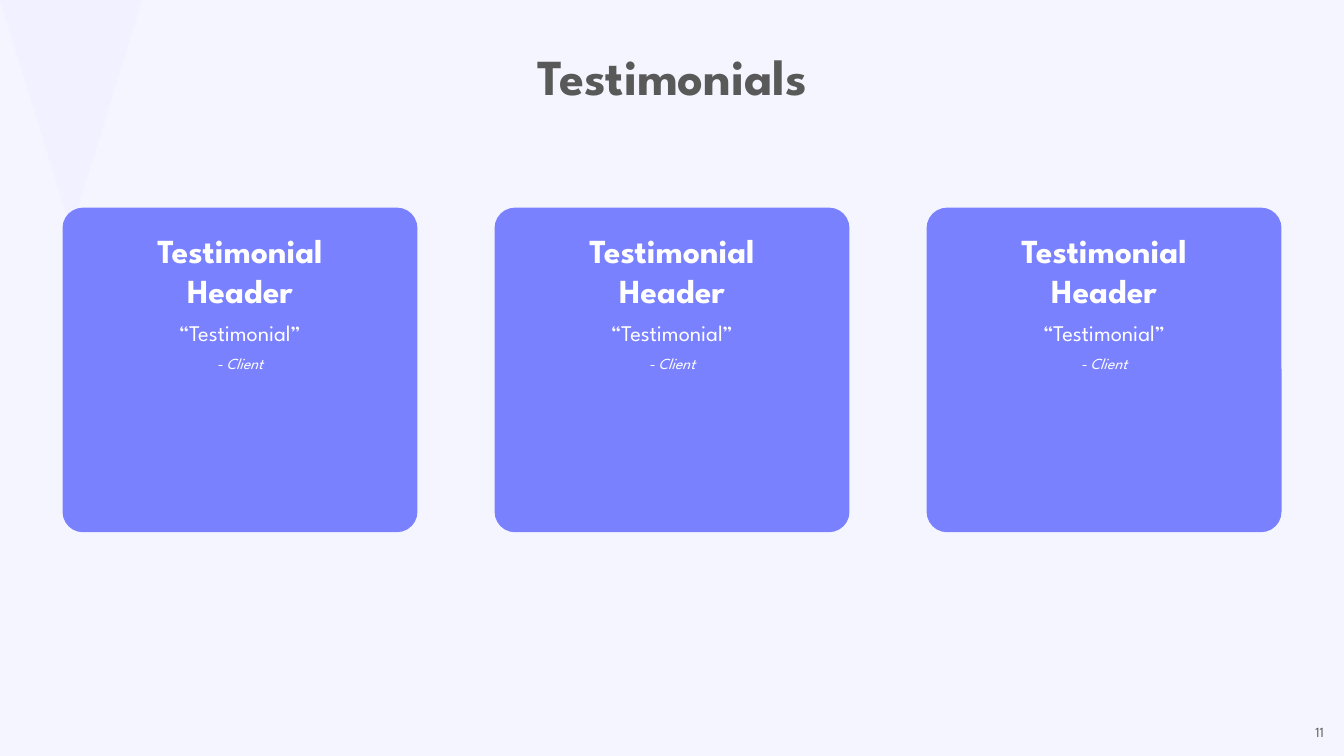
"""Build the testimonials slide with three client cards."""
from dataclasses import dataclass

from pptx import Presentation
from pptx.dml.color import RGBColor
from pptx.enum.shapes import MSO_AUTO_SHAPE_TYPE as ShapeType
from pptx.enum.text import MSO_AUTO_SIZE as AutoSize, PP_ALIGN as Align
from pptx.shapes.autoshape import Shape
from pptx.slide import Slide
from pptx.util import Inches, Pt

FONT = "League Spartan"
BACKGROUND, TRIANGLE, CARD = "F5F5FF", "F1F1FF", "7A81FF"
GREY, WHITE = "595959", "FFFFFF"
SLIDE_WIDTH, SLIDE_HEIGHT = 13.33, 7.5
MARGIN, CARD_TOP, CARD_WIDTH, CARD_HEIGHT = 0.62, 2.06, 3.52, 3.22
TEXT_INSET, TEXT_TOP, TEXT_HEIGHT = 0.345, 2.23, 1.53


@dataclass(frozen=True)
class Area:
    left: float
    top: float
    width: float
    height: float

    def lengths(self) -> tuple[Inches, ...]:
        return tuple(Inches(value) for value in (self.left, self.top, self.width, self.height))


@dataclass(frozen=True)
class Line:
    text: str
    size: float
    color: str
    bold: bool = False
    italic: bool = False
    space_before: float = 0


@dataclass(frozen=True)
class Testimonial:
    header: str
    quote: str
    client: str


TESTIMONIALS = [Testimonial("Testimonial Header", "“Testimonial”", "- Client")] * 3


def rgb(color: str) -> RGBColor:
    return RGBColor.from_string(color)


def add_block(page: Slide, kind: ShapeType, area: Area, color: str) -> Shape:
    block = page.shapes.add_shape(kind, *area.lengths())
    block.shadow.inherit = False
    block.fill.solid()
    block.fill.fore_color.rgb = rgb(color)
    block.line.fill.background()
    return block


def add_text(page: Slide, area: Area, lines: list[Line], align: Align,
             right: float = 0.1, vertical: float = 0.05) -> None:
    frame = page.shapes.add_textbox(*area.lengths()).text_frame
    frame.word_wrap = True
    frame.auto_size = AutoSize.SHAPE_TO_FIT_TEXT
    frame.margin_right = Inches(right)
    frame.margin_top = frame.margin_bottom = Inches(vertical)
    frame.text = "\n".join(line.text for line in lines)
    for para, line in zip(frame.paragraphs, lines):
        para.alignment = align
        para.space_before = Pt(line.space_before)
        for span in para.runs:
            span.font.name = FONT
            span.font.size = Pt(line.size)
            span.font.bold = line.bold
            span.font.italic = line.italic
            span.font.color.rgb = rgb(line.color)


def add_card(page: Slide, left: float, testimonial: Testimonial) -> None:
    card = add_block(page, ShapeType.ROUNDED_RECTANGLE,
                     Area(left, CARD_TOP, CARD_WIDTH, CARD_HEIGHT), CARD)
    card.adjustments[0] = 0.063
    lines = [
        Line(testimonial.header, 24, WHITE, bold=True),
        Line(testimonial.quote, 16, WHITE, space_before=6),
        Line(testimonial.client, 11, WHITE, italic=True, space_before=6),
    ]
    area = Area(left + TEXT_INSET, TEXT_TOP, CARD_WIDTH - 2 * TEXT_INSET, TEXT_HEIGHT)
    add_text(page, area, lines, Align.CENTER)


def main() -> None:
    deck = Presentation()
    deck.slide_width, deck.slide_height = Inches(SLIDE_WIDTH), Inches(SLIDE_HEIGHT)
    page = deck.slides.add_slide(deck.slide_layouts[6])
    page.background.fill.solid()
    page.background.fill.fore_color.rgb = rgb(BACKGROUND)

    triangle = add_block(page, ShapeType.ISOSCELES_TRIANGLE, Area(0, 0, 1.41, 2.28), TRIANGLE)
    triangle.rotation = 180
    add_text(page, Area(0.71, 0.4, 11.92, 0.71),
             [Line("Testimonials", 36, GREY, bold=True)], Align.CENTER)
    add_text(page, Area(12.43, 7.1, 0.9, 0.33),
             [Line("11", 10, GREY)], Align.RIGHT, right=0.2, vertical=0.08)

    pitch = (SLIDE_WIDTH - 2 * MARGIN - CARD_WIDTH) / (len(TESTIMONIALS) - 1)
    for index, testimonial in enumerate(TESTIMONIALS):
        add_card(page, MARGIN + index * pitch, testimonial)
    deck.save("out.pptx")


if __name__ == "__main__":
    main()
